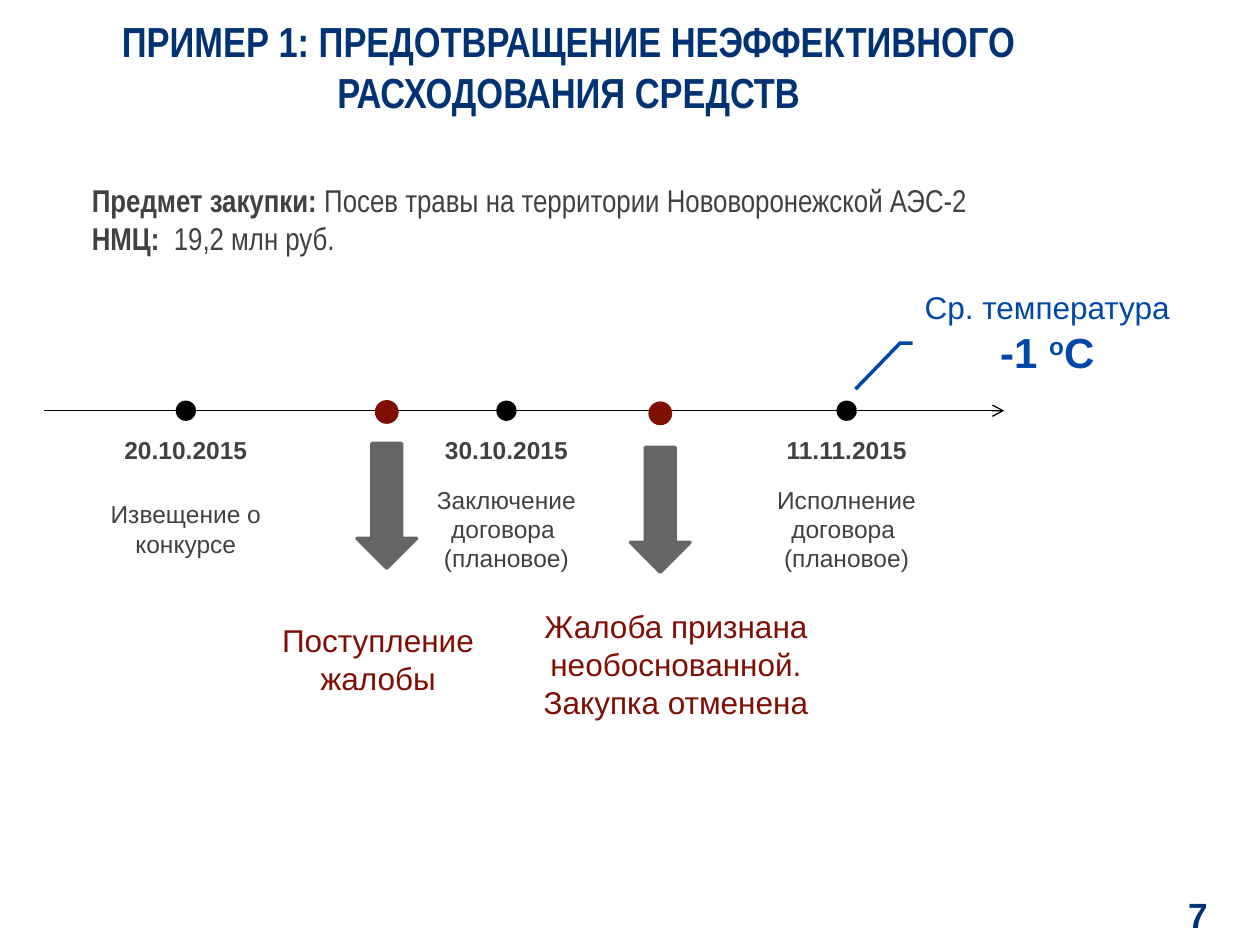
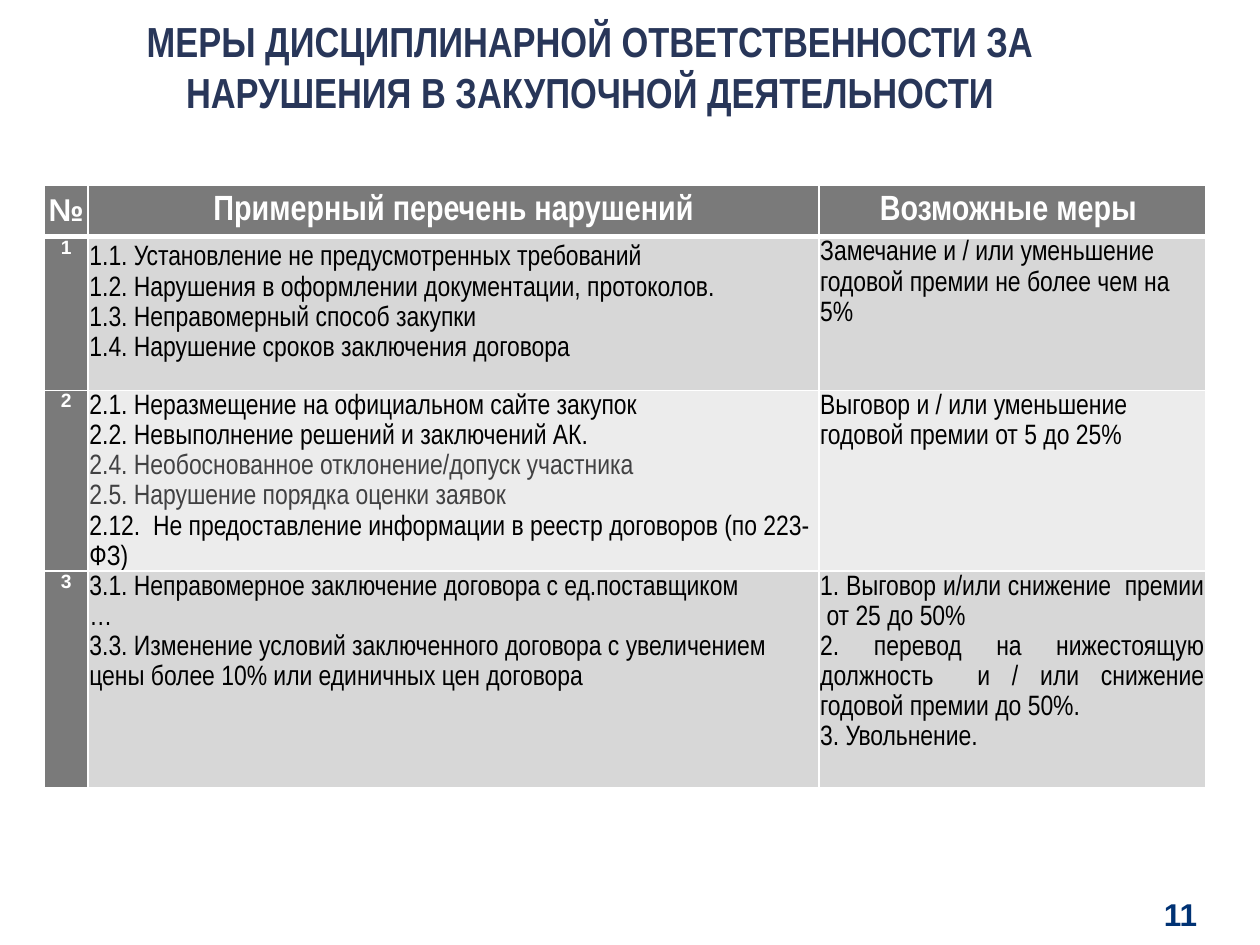
"""Builds two slides on procurement control: a tender timeline and a table of sanctions."""
from lxml import etree
from pptx import Presentation
from pptx.dml.color import RGBColor
from pptx.enum.shapes import MSO_CONNECTOR, MSO_SHAPE
from pptx.enum.text import MSO_ANCHOR, PP_ALIGN
from pptx.oxml import parse_xml
from pptx.oxml.ns import nsdecls, qn
from pptx.util import Pt

LEFT, CENTER, RIGHT, JUSTIFY = PP_ALIGN.LEFT, PP_ALIGN.CENTER, PP_ALIGN.RIGHT, PP_ALIGN.JUSTIFY
TOP, MIDDLE = MSO_ANCHOR.TOP, MSO_ANCHOR.MIDDLE
OVAL, DOWN_ARROW = MSO_SHAPE.OVAL, MSO_SHAPE.DOWN_ARROW
CALLOUT = MSO_SHAPE.LINE_CALLOUT_2_NO_BORDER
STRAIGHT = MSO_CONNECTOR.STRAIGHT

NAVY, SLATE, BLUE, MAROON = "003274", "283659", "0048A8", "7F0F03"
BLACK, WHITE, TEXT_GRAY, ARROW_GRAY = "000000", "FFFFFF", "414142", "666666"
HEAD_GRAY, BAND_DARK, BAND_LIGHT = "7A7A7A", "D7D7D7", "ECECEC"
SANS, NARROW = "Arial", "Arial Narrow"


def paint(fill, color):
    """Give a shape, line or font fill one solid colour."""
    fill.solid()
    fill.fore_color.rgb = RGBColor.from_string(color)


def write(frame, text, size=18, color=TEXT_GRAY, font=SANS, bold=False, align=CENTER,
          anchor=TOP, margins=(7.2, 3.6), spacing=None):
    """Fill a frame or cell with paragraphs, each a string or a list of (text, changes)."""
    holder = frame
    if hasattr(frame, "text_frame"):
        frame = frame.text_frame
    holder.vertical_anchor = anchor
    holder.margin_left = holder.margin_right = Pt(margins[0])
    holder.margin_top = holder.margin_bottom = Pt(margins[1])
    frame.word_wrap = True
    for index, spans in enumerate(text):
        para = frame.add_paragraph() if index else frame.paragraphs[0]
        para.alignment = align
        if spacing:
            para.line_spacing = Pt(spacing)
        for words, changes in [(spans, {})] if isinstance(spans, str) else spans:
            span = para.add_run()
            span.text = words
            span.font.name = font
            span.font.size = Pt(changes.get("size", size))
            span.font.bold = changes.get("bold", bold)
            paint(span.font.fill, changes.get("color", color))
            if "baseline" in changes:
                span._r.get_or_add_rPr().set("baseline", changes["baseline"])


deck = Presentation()
deck.slide_width, deck.slide_height = Pt(720), Pt(540)

headings = [
    ("ПРИМЕР 1: ПРЕДОТВРАЩЕНИЕ НЕЭФФЕКТИВНОГО РАСХОДОВАНИЯ СРЕДСТВ", 24.5, NAVY, "7", 40, 20),
    ("МЕРЫ ДИСЦИПЛИНАРНОЙ ОТВЕТСТВЕННОСТИ ЗА НАРУШЕНИЯ В ЗАКУПОЧНОЙ ДЕЯТЕЛЬНОСТИ",
     36.7, SLATE, "11", 34, 18),
]
pages = []
for title, left, color, number, number_width, number_size in headings:
    page = deck.slides.add_slide(deck.slide_layouts[6])
    box = page.shapes.add_textbox(Pt(left), Pt(0), Pt(601), Pt(75.6))
    write(box.text_frame, [title], size=24, color=color, font=NARROW, bold=True,
          anchor=MIDDLE, margins=(0, 0))
    box = page.shapes.add_textbox(Pt(650), Pt(507.6), Pt(number_width), Pt(29.5))
    write(box.text_frame, [number], size=number_size, color=NAVY, bold=True, align=RIGHT,
          anchor=MIDDLE, margins=(0, 0))
    pages.append(page)
timeline, sanctions = pages

axis_y, dot = 234.7, 11.6
axis = timeline.shapes.add_connector(STRAIGHT, Pt(25.2), Pt(axis_y), Pt(573.8), Pt(axis_y))
paint(axis.line.fill, BLACK)
axis.line.width = Pt(0.75)
etree.SubElement(axis.line._get_or_add_ln(), qn("a:tailEnd"), type="arrow")
etree.SubElement(axis._element.spPr, qn("a:effectLst"))

milestones = [
    (106.2, "20.10.2015", ["Извещение о конкурсе"]),
    (289.4, "30.10.2015", ["Заключение договора ", "(плановое)"]),
    (483.8, "11.11.2015", ["Исполнение договора ", "(плановое)"]),
]
complaints = [(221, 253.4, 235.4), (377.3, 255.6, 236.2)]

marks = [(OVAL, x - dot / 2, axis_y - dot / 2, dot, dot, BLACK, None) for x, _, _ in milestones]
for x, arrow_top, y in complaints:
    marks.append((DOWN_ARROW, x - 17, arrow_top, 34, 71.3, ARROW_GRAY, ARROW_GRAY))
    marks.append((OVAL, x - dot / 2, y - dot / 2, dot, dot, MAROON, MAROON))
marks.append((CALLOUT, 528.5, 190.8, 85, 28.1, None, BLUE))
for kind, left, top, width, height, fill, line in marks:
    mark = timeline.shapes.add_shape(kind, Pt(left), Pt(top), Pt(width), Pt(height))
    mark.shadow.inherit = False
    if fill:
        paint(mark.fill, fill)
    else:
        mark.fill.background()
    if line:
        paint(mark.line.fill, line)
        mark.line.width = Pt(2)
    else:
        mark.line.fill.background()

strong = {"bold": True}
large = {"bold": True, "size": 24}
labels = [
    (45.4, 100, 590, 51,
     [[("Предмет закупки: ", strong), ("Посев травы на территории Нововоронежской АЭС-2", {})],
      [("НМЦ:  ", strong), ("19,2 млн руб.", {})]], {"font": NARROW, "align": LEFT}),
    (513.4, 161.3, 170, 58.3,
     ["Ср. температура",
      [("-1 ", large), ("о", {**large, "baseline": "30000"}), ("С", large)]], {"color": BLUE}),
    (139, 351.5, 154, 51, ["Поступление жалобы"], {"color": MAROON}),
    (299.5, 343.5, 173.5, 72.7,
     ["Жалоба признана необоснованной.", "Закупка отменена"], {"color": MAROON}),
]
for x, date, event in milestones:
    labels.append((x - 49, 244.8, 98, 24.5, [date], {"size": 14, "bold": True}))
    labels.append((x - 54, 273, 108, 58.3, event, {"size": 14, "anchor": MIDDLE}))
for left, top, width, height, text, style in labels:
    box = timeline.shapes.add_textbox(Pt(left), Pt(top), Pt(width), Pt(height))
    write(box.text_frame, text, **style)

gray = {"color": TEXT_GRAY}
rows = [
    (29.5, ["№"], ["Примерный перечень нарушений"], ["Возможные меры "]),
    (87.8, ["1"],
     ["1.1. Установление не предусмотренных требований",
      "1.2. Нарушения в оформлении документации, протоколов.",
      "1.3. Неправомерный способ закупки",
      "1.4. Нарушение сроков заключения договора"],
     ["Замечание и / или уменьшение годовой премии не более чем на 5%"]),
    (103.2, ["2"],
     ["2.1. Неразмещение на официальном сайте закупок",
      "2.2. Невыполнение решений и заключений АК.",
      [("2.4. Необоснованное отклонение/допуск участника", gray)],
      [("2.5. Нарушение порядка оценки заявок", gray)],
      "2.12.  Не предоставление информации в реестр договоров (по 223-ФЗ)"],
     ["Выговор и / или уменьшение годовой премии от 5 до 25%"]),
    (123.8, ["3"],
     ["3.1. Неправомерное заключение договора с ед.поставщиком",
      "…",
      "3.3. Изменение условий заключенного договора с увеличением цены более 10% "
      "или единичных цен договора"],
     ["1. Выговор и/или снижение  премии  от 25 до 50%",
      "2. перевод на нижестоящую должность  и / или снижение годовой премии до 50%.",
      "3. Увольнение."]),
]
widths = [25.2, 417.6, 221]
table = sanctions.shapes.add_table(len(rows), len(widths), Pt(25.2), Pt(105.8),
                                   Pt(sum(widths)), Pt(sum(row[0] for row in rows))).table
for column, width in zip(table.columns, widths):
    column.width = Pt(width)
for r, (height, *texts) in enumerate(rows):
    table.rows[r].height = Pt(height)
    for c, text in enumerate(texts):
        cell = table.cell(r, c)
        for side in "LRTB":
            thick = (r, side) in ((0, "B"), (1, "T"))
            cell._tc.get_or_add_tcPr().append(parse_xml(
                f'<a:ln{side} {nsdecls("a")} w="{Pt(3 if thick else 1)}"><a:solidFill>'
                f'<a:srgbClr val="{WHITE}"/></a:solidFill></a:ln{side}>'))
        style = {"margins": (0.72, 0)}
        if r == 0 or c == 0:
            background = HEAD_GRAY
            style.update(color=WHITE, bold=True, font=NARROW if c else SANS,
                         size=20 if c else 11 if r else 18, anchor=TOP if r else MIDDLE)
        else:
            background = BAND_DARK if r % 2 else BAND_LIGHT
            style.update(color=BLACK, font=NARROW, size=16, spacing=17.2,
                         align=JUSTIFY if (r, c) == (3, 2) else LEFT)
            if (r, c) == (1, 1):
                style["margins"] = (0.72, 2.9)
        paint(cell.fill, background)
        write(cell, text, **style)

deck.save("out.pptx")
